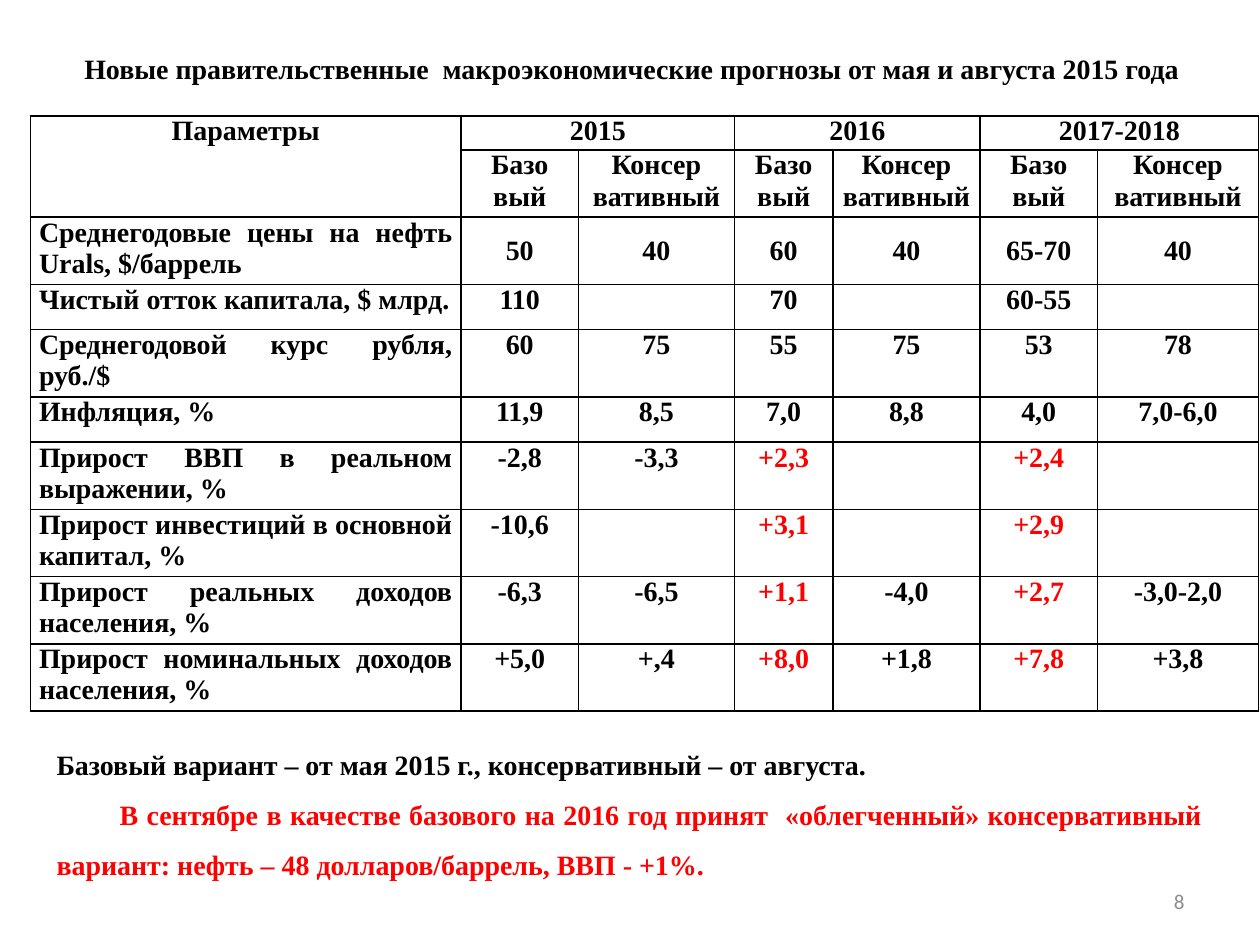
from lxml.etree import SubElement
from pptx import Presentation
from pptx.dml.color import RGBColor
from pptx.enum.text import MSO_ANCHOR, PP_ALIGN
from pptx.oxml.ns import qn
from pptx.util import Inches, Pt

THEME = {
    "font": "Times New Roman",
    "number_font": "Calibri",
    "black": "000000",
    "red": "FF0000",
    "gray": "8C8C8C",
    "size": 16,
    "number_size": 12,
    "border": 1,
}

TITLE = "Новые правительственные  макроэкономические прогнозы от мая и августа 2015 года"
PARAMETER_HEADER = "Параметры"
PERIODS = ["2015", "2016", "2017-2018"]
VARIANTS = ["Базо вый", "Консер вативный"]
INDICATORS = [
    ("Среднегодовые цены на нефть Urals, $/баррель", ["50", "40", "60", "40", "65-70", "40"]),
    ("Чистый отток капитала, $ млрд.", ["110", "", "70", "", "60-55", ""]),
    ("Среднегодовой курс рубля, руб./$", ["60", "75", "55", "75", "53", "78"]),
    ("Инфляция, %", ["11,9", "8,5", "7,0", "8,8", "4,0", "7,0-6,0"]),
    ("Прирост ВВП в реальном выражении, %", ["-2,8", "-3,3", "+2,3", "", "+2,4", ""]),
    ("Прирост инвестиций в основной капитал, %", ["-10,6", "", "+3,1", "", "+2,9", ""]),
    ("Прирост реальных доходов населения, %", ["-6,3", "-6,5", "+1,1", "-4,0", "+2,7", "-3,0-2,0"]),
    ("Прирост номинальных доходов населения, %", ["+5,0", "+,4", "+8,0", "+1,8", "+7,8", "+3,8"]),
]
VARIANT_NOTE = "Базовый вариант – от мая 2015 г., консервативный – от августа."
SEPTEMBER_NOTE = (
    "В сентябре в качестве базового на 2016 год принят  «облегченный» консервативный "
    "вариант: нефть – 48 долларов/баррель, ВВП - +1%."
)
PAGE_NUMBER = "8"

COLUMN_WIDTHS = [3.42, 0.93, 1.24, 0.78, 1.17, 0.93, 1.28]
HEADER_HEIGHT, TALL_ROW, SHORT_ROW = 0.27, 0.53, 0.36
SHORT_INDICATORS = {"Чистый отток капитала, $ млрд.", "Инфляция, %"}
FORECAST_BASE_COLUMNS = {3, 5}


def write_text(paragraph, text, *, color="black", size="size", font="font", bold=True,
               align=PP_ALIGN.LEFT, spacing=None, indent=None):
    paragraph.alignment = align
    if spacing:
        paragraph.line_spacing = spacing
    if indent:
        paragraph._p.get_or_add_pPr().set("indent", str(Inches(indent)))
    run = paragraph.add_run()
    run.text = text
    run.font.name = THEME[font]
    run.font.size = Pt(THEME[size])
    run.font.bold = bold
    run.font.color.rgb = RGBColor.from_string(THEME[color])


def add_text_frame(slide, left, top, width, height, *, wrap=True, anchor=MSO_ANCHOR.TOP):
    shape = slide.shapes.add_textbox(Inches(left), Inches(top), Inches(width), Inches(height))
    shape.text_frame.word_wrap = wrap
    shape.text_frame.vertical_anchor = anchor
    return shape.text_frame


def format_cell(cell):
    cell.margin_left = cell.margin_right = Inches(0.07)
    cell.margin_top = cell.margin_bottom = 0
    properties = cell._tc.get_or_add_tcPr()
    for side in ("a:lnL", "a:lnR", "a:lnT", "a:lnB"):
        line = SubElement(properties, qn(side), w=str(Pt(THEME["border"])))
        fill = SubElement(line, qn("a:solidFill"))
        SubElement(fill, qn("a:srgbClr"), val=THEME["black"])
    cell.fill.background()


def write_cell(cell, text, **text_format):
    if text:
        text_format.setdefault("align", PP_ALIGN.CENTER)
        write_text(cell.text_frame.paragraphs[0], text, **text_format)


def add_forecast_table(slide):
    row_heights = [HEADER_HEIGHT, TALL_ROW] + [
        SHORT_ROW if name in SHORT_INDICATORS else TALL_ROW for name, _ in INDICATORS
    ]
    frame = slide.shapes.add_table(
        len(row_heights), len(COLUMN_WIDTHS), Inches(0.24), Inches(0.92),
        Inches(sum(COLUMN_WIDTHS)), Inches(sum(row_heights)),
    )
    table = frame.table
    table.first_row = table.horz_banding = False
    for column, width in zip(table.columns, COLUMN_WIDTHS):
        column.width = Inches(width)
    for row, height in zip(table.rows, row_heights):
        row.height = Inches(height)
    for cell in table.iter_cells():
        format_cell(cell)

    table.cell(0, 0).merge(table.cell(1, 0))
    write_cell(table.cell(0, 0), PARAMETER_HEADER)
    for index, period in enumerate(PERIODS):
        first = 1 + index * len(VARIANTS)
        table.cell(0, first).merge(table.cell(0, first + len(VARIANTS) - 1))
        write_cell(table.cell(0, first), period)
        for offset, variant in enumerate(VARIANTS):
            write_cell(table.cell(1, first + offset), variant)

    for row, (name, values) in enumerate(INDICATORS, start=2):
        write_cell(table.cell(row, 0), name, align=PP_ALIGN.JUSTIFY)
        for column, value in enumerate(values, start=1):
            cell = table.cell(row, column)
            growth = column in FORECAST_BASE_COLUMNS and value.startswith("+")
            write_cell(cell, value, color="red" if growth else "black")
            if row == 2:
                cell.vertical_anchor = MSO_ANCHOR.MIDDLE


def main():
    presentation = Presentation()
    presentation.slide_width, presentation.slide_height = Inches(10), Inches(7.5)
    slide = presentation.slides.add_slide(presentation.slide_layouts[6])

    number = add_text_frame(slide, 7.17, 6.95, 2.33, 0.4, anchor=MSO_ANCHOR.MIDDLE)
    write_text(number.paragraphs[0], PAGE_NUMBER, color="gray", size="number_size",
               font="number_font", bold=False, align=PP_ALIGN.RIGHT)

    title = add_text_frame(slide, 0.51, 0.36, 9.01, 0.37, wrap=False, anchor=MSO_ANCHOR.MIDDLE)
    write_text(title.paragraphs[0], TITLE, align=PP_ALIGN.CENTER)

    add_forecast_table(slide)

    notes = add_text_frame(slide, 0.35, 5.88, 9.29, 1.18)
    write_text(notes.paragraphs[0], VARIANT_NOTE)
    write_text(notes.add_paragraph(), SEPTEMBER_NOTE, color="red", align=PP_ALIGN.JUSTIFY,
               spacing=1.5, indent=0.5)

    presentation.save("out.pptx")


if __name__ == "__main__":
    main()
